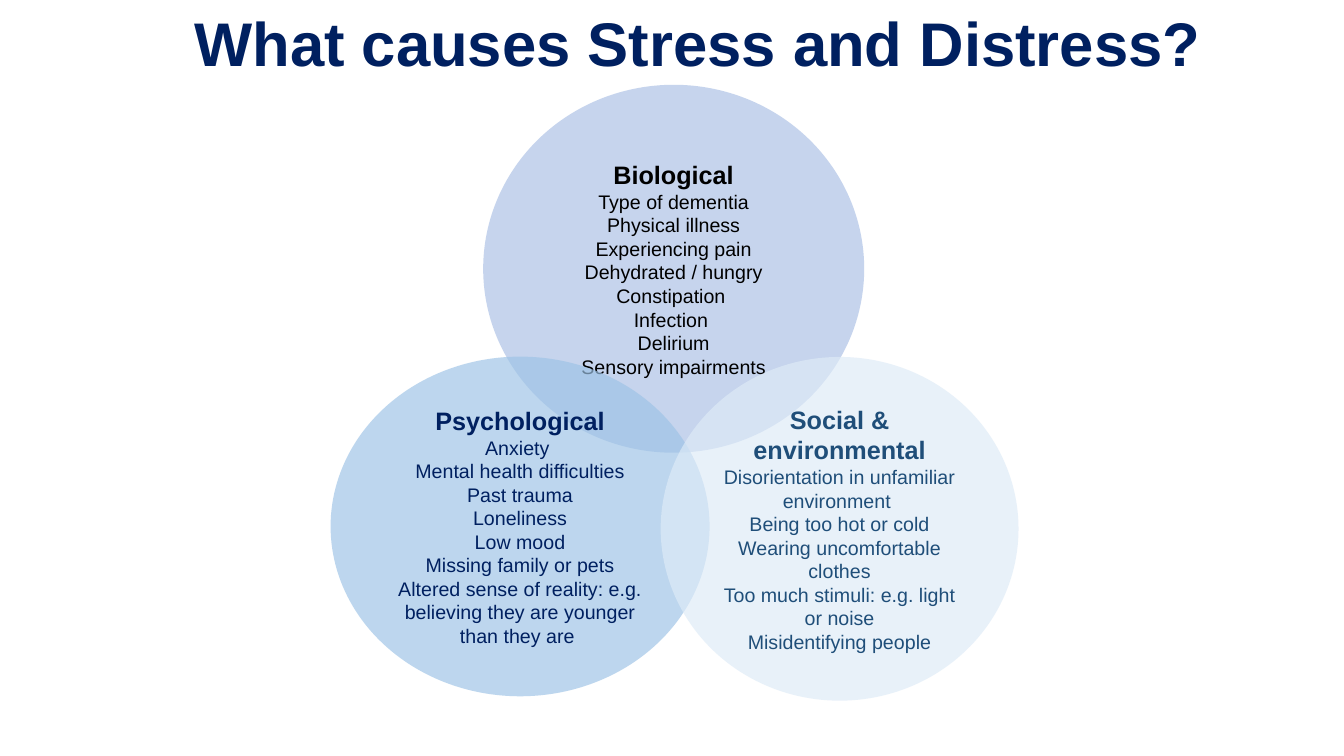
from dataclasses import dataclass

from lxml import etree
from pptx import Presentation
from pptx import util as u
from pptx.dml.color import RGBColor
from pptx.enum import shapes, text
from pptx.oxml import ns


@dataclass(frozen=True)
class Theme:
    font: str = "Arial"
    title_size: int = 44
    heading_size: int = 18
    body_size: int = 14
    navy: str = "002060"


THEME = Theme()
SLIDE_WIDTH, SLIDE_HEIGHT = u.Inches(13.333), u.Inches(7.5)

TITLE = "What causes Stress and Distress?"
TITLE_AREA = (13.73, 0, 81.3, 11.2)

CAUSES = [
    {
        "heading": "Biological",
        "items": [
            "Type of dementia",
            "Physical illness",
            "Experiencing pain",
            "Dehydrated / hungry",
            "Constipation ",
            "Infection ",
            "Delirium",
            "Sensory impairments",
        ],
        "area": (35.95, 11.22, 28.35, 48.67),
        "fill": "8FAADC",
        "opacity": 50,
        "ink": "000000",
    },
    {
        "heading": "Psychological",
        "items": [
            "Anxiety ",
            "Mental health difficulties",
            "Past trauma",
            "Loneliness",
            "Low mood",
            "Missing family or pets",
            "Altered sense of reality: e.g. believing they are younger than they are ",
        ],
        "area": (24.6, 47.17, 28.2, 44.93),
        "fill": "9DC3E6",
        "opacity": 67,
        "ink": THEME.navy,
    },
    {
        "heading": "Social & environmental",
        "items": [
            "Disorientation in unfamiliar environment ",
            "Being too hot or cold",
            "Wearing uncomfortable clothes",
            "Too much stimuli: e.g. light or noise",
            "Misidentifying people",
        ],
        "area": (49.16, 47.22, 26.63, 45.47),
        "fill": "DEEBF7",
        "opacity": 67,
        "ink": "1F4E79",
    },
]


def place(area):
    sides = (SLIDE_WIDTH, SLIDE_HEIGHT) * 2
    return [round(side * percent / 100) for side, percent in zip(sides, area)]


def style(paragraph, size, color, bold, alignment):
    paragraph.alignment = alignment
    for run in paragraph.runs:
        run.font.name = THEME.font
        run.font.size = u.Pt(size)
        run.font.bold = bold
        run.font.color.rgb = RGBColor.from_string(color)


def set_opacity(shape, percent):
    color = shape.fill._xPr.find(".//" + ns.qn("a:srgbClr"))
    etree.SubElement(color, ns.qn("a:alpha")).set("val", str(percent * 1000))


def add_cause(slide, cause):
    circle = slide.shapes.add_shape(shapes.MSO_SHAPE.OVAL, *place(cause["area"]))
    circle.shadow.inherit = False
    circle.line.fill.background()
    circle.fill.solid()
    circle.fill.fore_color.rgb = RGBColor.from_string(cause["fill"])
    set_opacity(circle, cause["opacity"])
    frame = circle.text_frame
    frame.word_wrap = True
    frame.vertical_anchor = text.MSO_ANCHOR.MIDDLE
    frame.text = "\n".join([cause["heading"], *cause["items"]])
    for index, paragraph in enumerate(frame.paragraphs):
        is_heading = index == 0
        size = THEME.heading_size if is_heading else THEME.body_size
        style(paragraph, size, cause["ink"], is_heading, text.PP_ALIGN.CENTER)


def add_title(slide):
    box = slide.shapes.add_textbox(*place(TITLE_AREA))
    frame = box.text_frame
    frame.word_wrap = True
    frame.auto_size = text.MSO_AUTO_SIZE.SHAPE_TO_FIT_TEXT
    frame.text = TITLE
    style(frame.paragraphs[0], THEME.title_size, THEME.navy, True, text.PP_ALIGN.LEFT)


def main():
    presentation = Presentation()
    presentation.slide_width, presentation.slide_height = SLIDE_WIDTH, SLIDE_HEIGHT
    slide = presentation.slides.add_slide(presentation.slide_layouts[6])
    for cause in CAUSES:
        add_cause(slide, cause)
    add_title(slide)
    presentation.save("out.pptx")


if __name__ == "__main__":
    main()
